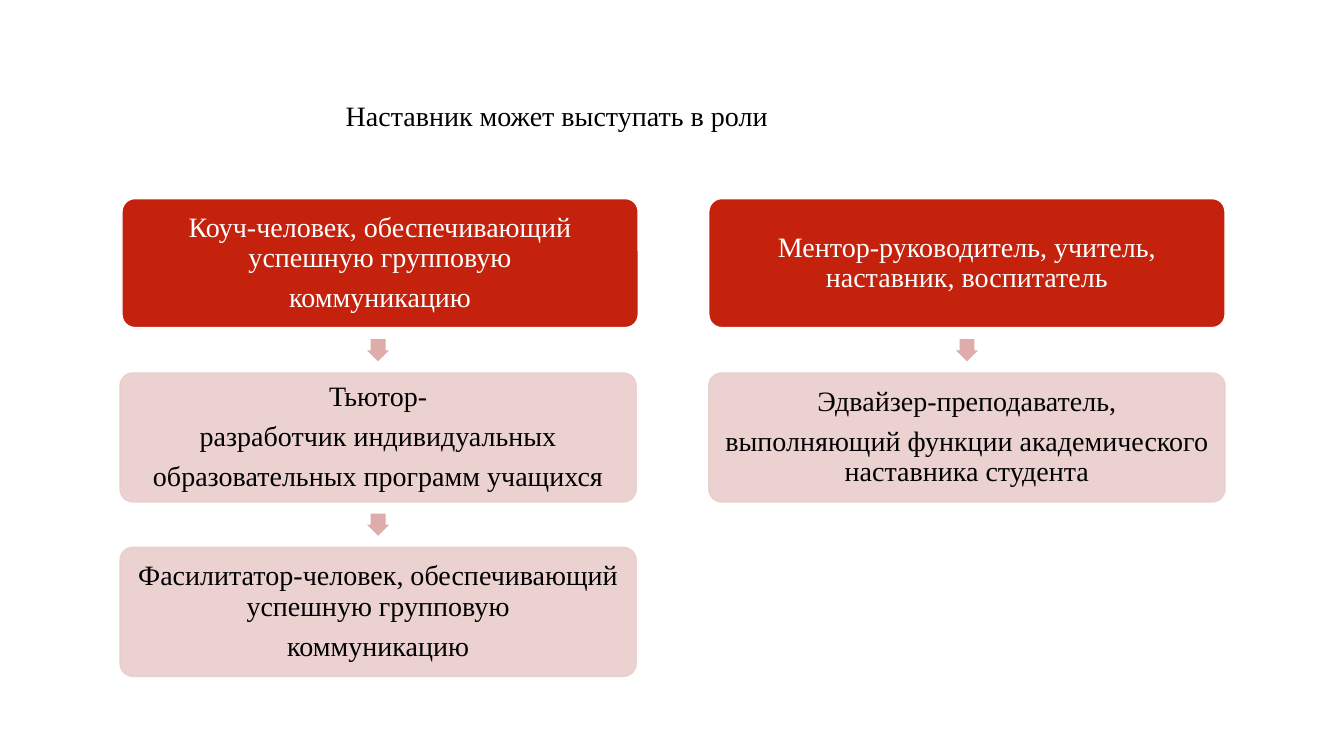
from lxml.etree import SubElement
from pptx import Presentation
from pptx.dml.color import RGBColor
from pptx.enum.shapes import MSO_SHAPE as Shape
from pptx.enum.text import MSO_ANCHOR as Anchor, PP_ALIGN as Align
from pptx.oxml.ns import qn
from pptx.util import Inches, Pt

TITLE = "Наставник может выступать в роли"
# Each column: left edge, shift of its head box, roles from top to bottom
COLUMNS = [
    (1.19, 0.02, [
        ["Коуч-человек, обеспечивающий успешную групповую", "коммуникацию"],
        ["Тьютор-", "разработчик индивидуальных",
         "образовательных программ учащихся"],
        ["Фасилитатор-человек, обеспечивающий успешную групповую",
         "коммуникацию"],
    ]),
    (7.03, 0, [
        ["Ментор-руководитель, учитель, наставник, воспитатель"],
        ["Эдвайзер-преподаватель,",
         "выполняющий функции академического наставника студента"],
    ]),
]
COLORS = {"head": "C4220D", "role": "EACDCC", "arrow": "DEACAB",
          "white": "FFFFFF", "black": "000000"}
FONT = "Times New Roman"
TOP, PITCH = 1.97, 1.73
WIDE, HIGH, ARROW = 5.12, 1.28, 0.22

deck = Presentation()
deck.slide_width, deck.slide_height = Inches(13.33), Inches(7.5)
slide = deck.slides.add_slide(deck.slide_layouts[6])


def write(shape, lines, color="black", align=Align.LEFT, anchor=Anchor.TOP,
          inset=None, leading=1.0, after=0):
    frame = shape.text_frame
    frame.word_wrap = True
    frame.vertical_anchor = anchor
    if inset is not None:
        frame.margin_left = frame.margin_right = Inches(inset)
        frame.margin_top = frame.margin_bottom = Inches(inset)
    for i, line in enumerate(lines):
        para = frame.add_paragraph() if i else frame.paragraphs[0]
        para.alignment = align
        para.line_spacing = leading
        para.space_after = Pt(after)
        run = para.add_run()
        run.text = line
        run.font.size, run.font.name = Pt(20), FONT
        run.font.color.rgb = RGBColor.from_string(COLORS[color])


def draw(kind, left, top, width, height, fill, line=None):
    shape = slide.shapes.add_shape(
        kind, Inches(left), Inches(top), Inches(width), Inches(height))
    shape.shadow.inherit = False
    shape.fill.solid()
    shape.fill.fore_color.rgb = RGBColor.from_string(COLORS[fill])
    if line:
        shape.line.color.rgb = RGBColor.from_string(COLORS[line])
        shape.line.width = Pt(1)
    else:
        shape.line.fill.background()
    return shape


def fade(shape, share):
    for color in shape._element.spPr.iter(qn("a:srgbClr")):
        SubElement(color, qn("a:alpha"), val=str(share * 1000))


# Title
title = slide.shapes.add_textbox(
    Inches(3.33), Inches(0.93), Inches(8.08), Inches(0.74))
write(title, [TITLE])

# Chains of roles with an arrow in each gap
for left, shift, roles in COLUMNS:
    for row, lines in enumerate(roles):
        top = TOP + row * PITCH
        if row:
            middle = top - (PITCH - HIGH) / 2
            arrow = draw(Shape.RIGHT_ARROW, left + (WIDE - ARROW) / 2,
                         middle - ARROW / 2, ARROW, ARROW, "arrow")
            arrow.adjustments[0] = 0.67
            arrow.rotation = 90
            box = draw(Shape.ROUNDED_RECTANGLE, left, top, WIDE, HIGH,
                       "role", "role")
            fade(box, 90)
        else:
            box = draw(Shape.ROUNDED_RECTANGLE, left + shift, top, WIDE, HIGH,
                       "head", "white")
        box.adjustments[0] = 0.1
        write(box, lines, color="black" if row else "white",
              align=Align.CENTER, anchor=Anchor.MIDDLE, inset=0.03,
              leading=0.9, after=7)

deck.save("out.pptx")
